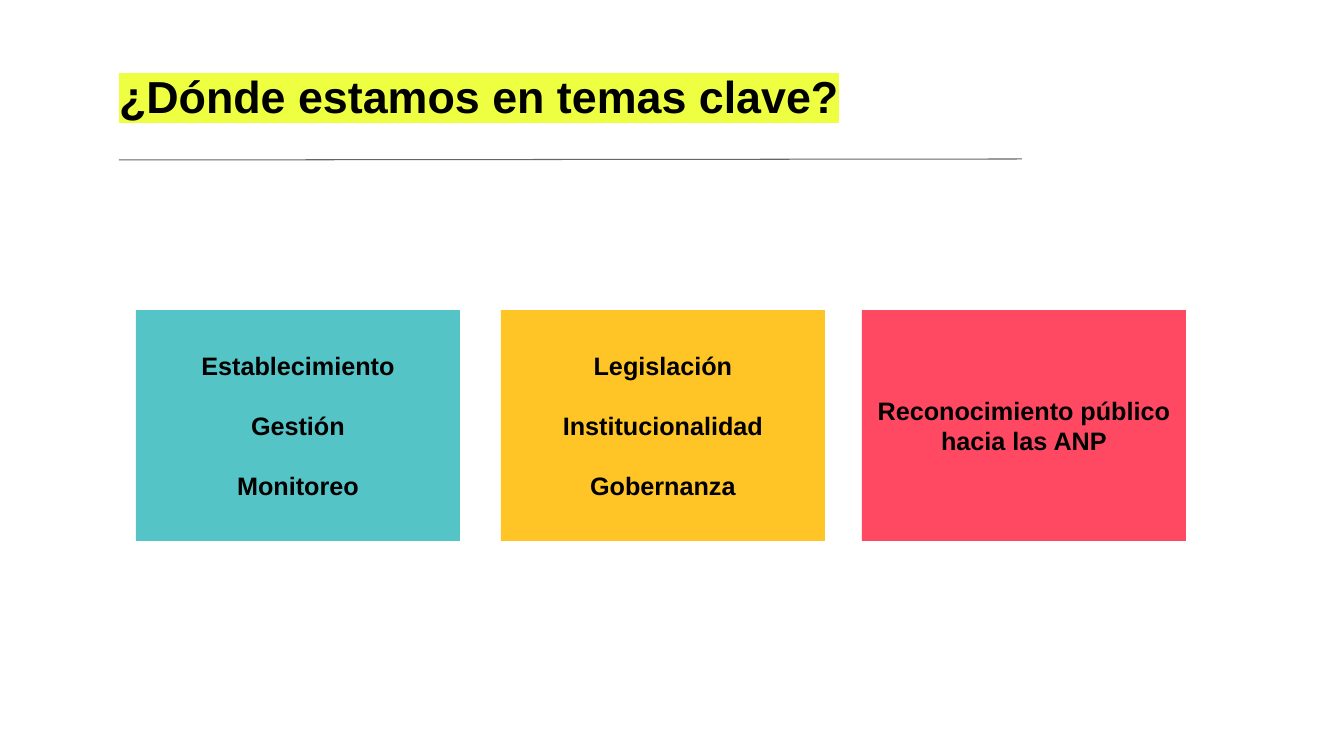
from lxml import etree
from pptx import Presentation, util as u
from pptx.dml.color import RGBColor
from pptx.enum import shapes, text
from pptx.oxml.ns import qn

EMU_PER_PX = 914400 / 100.8
TITLE_ONLY = 5


def px(length):
    return u.Emu(round(length * EMU_PER_PX))


def rgb(colour):
    return RGBColor.from_string(colour)


class SlideBuilder:
    FONT = "Arial"
    INK = "000000"
    INSET = 13

    def __init__(self, slide):
        self.slide = slide

    def format_text(self, shape, size, alignment, space_before=0):
        """Style every run; space_before parts the paragraphs after the first."""
        frame = shape.text_frame
        frame.word_wrap = True
        frame.auto_size = text.MSO_AUTO_SIZE.NONE
        frame.vertical_anchor = text.MSO_ANCHOR.MIDDLE
        frame.margin_left = frame.margin_right = px(self.INSET)
        frame.margin_top = frame.margin_bottom = px(self.INSET)
        for index, paragraph in enumerate(frame.paragraphs):
            paragraph.alignment = alignment
            paragraph.space_before = u.Pt(space_before if index else 0)
            for run in paragraph.runs:
                run.font.name = self.FONT
                run.font.size = u.Pt(size)
                run.font.bold = True
                run.font.color.rgb = rgb(self.INK)

    def highlight(self, run, colour):
        fill = run.font._element.find(qn("a:solidFill"))
        marker = etree.Element(qn("a:highlight"))
        etree.SubElement(marker, qn("a:srgbClr"), val=colour)
        fill.addnext(marker)

    def title(self, wording, left, top, width, height, marker):
        title = self.slide.shapes.title
        title.left, title.top = px(left), px(top)
        title.width, title.height = px(width), px(height)
        title.text_frame.text = wording
        self.format_text(title, 32, text.PP_ALIGN.LEFT)
        self.highlight(title.text_frame.paragraphs[0].runs[0], marker)

    def rule(self, x1, y1, x2, y2, colour):
        line = self.slide.shapes.add_connector(
            shapes.MSO_CONNECTOR.STRAIGHT, px(x1), px(y1), px(x2), px(y2))
        line.line.color.rgb = rgb(colour)
        line.line.width = u.Pt(0.75)
        etree.SubElement(line._element.spPr, qn("a:effectLst"))

    def card(self, topics, left, top, width, height, colour):
        card = self.slide.shapes.add_shape(
            shapes.MSO_SHAPE.RECTANGLE, px(left), px(top), px(width), px(height))
        card.shadow.inherit = False
        card.fill.solid()
        card.fill.fore_color.rgb = rgb(colour)
        card.line.fill.background()
        card.text_frame.text = "\n".join(topics)
        self.format_text(card, 18, text.PP_ALIGN.CENTER, space_before=21)


def main():
    presentation = Presentation()
    presentation.slide_width, presentation.slide_height = px(1344), px(756)
    layout = presentation.slide_layouts[TITLE_ONLY]
    builder = SlideBuilder(presentation.slides.add_slide(layout))

    builder.rule(119, 160, 1022, 159, "666666")
    builder.title("¿Dónde estamos en temas clave?", 106, 26, 1058, 140, "EEFF41")

    cards = [
        (136, "54C4C6", ["Establecimiento", "Gestión", "Monitoreo"]),
        (501, "FFC426", ["Legislación", "Institucionalidad", "Gobernanza"]),
        (862, "FF4962", ["Reconocimiento público hacia las ANP"]),
    ]
    for left, colour, topics in cards:
        builder.card(topics, left, 310, 324, 231, colour)

    presentation.save("out.pptx")


if __name__ == "__main__":
    main()
